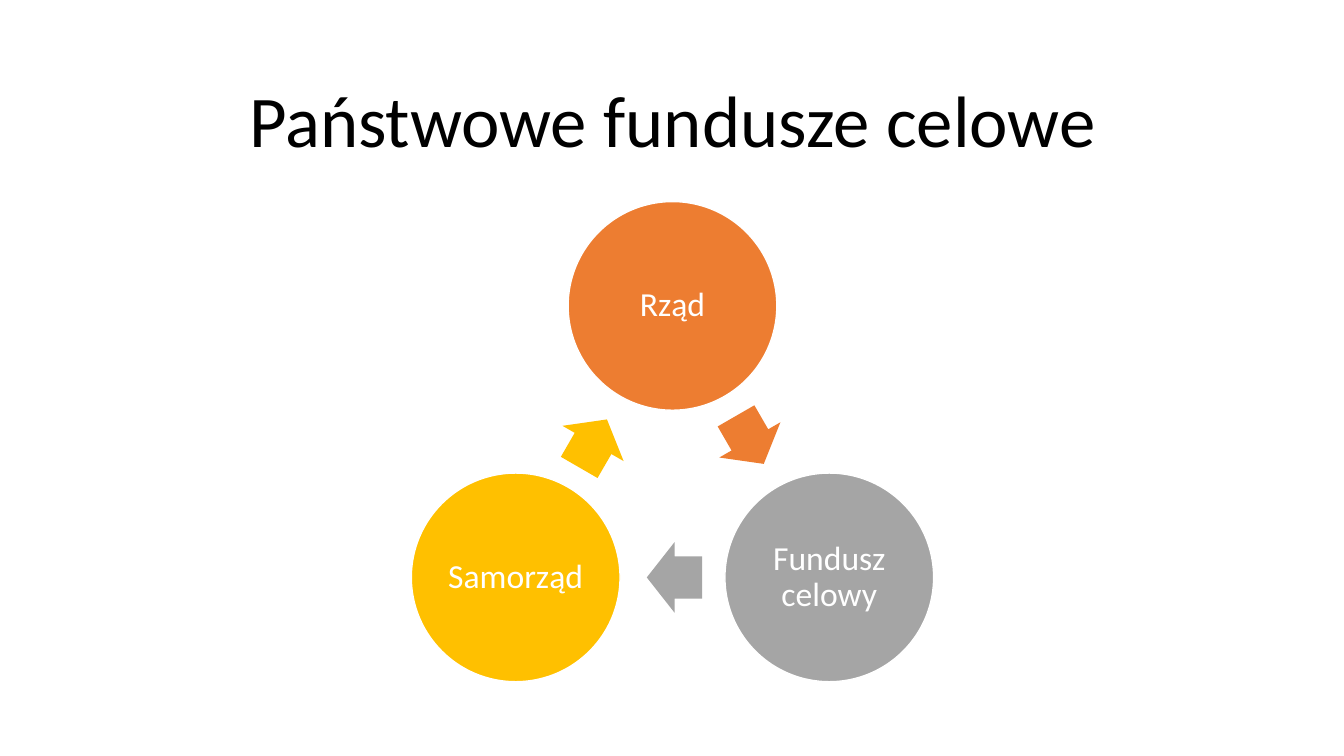
import math
import pptx
import pptx.dml.color
import pptx.enum.shapes
import pptx.enum.text
import pptx.util
from pptx.util import Inches

FONT = "Calibri"
STAGES = [("Rząd", "ED7D31"), ("Fundusz celowy", "A5A5A5"), ("Samorząd", "FFC000")]
DIAMETER = 2.07
ARROW_W, ARROW_H = 0.55, 0.7
ARROW_SETBACK = 0.02


def rgb(value):
    return pptx.dml.color.RGBColor.from_string(value)


def set_text(sp, text, size, color, inset):
    tf = sp.text_frame
    tf.word_wrap = True
    tf.vertical_anchor = pptx.enum.text.MSO_ANCHOR.MIDDLE
    tf.margin_left = tf.margin_right = tf.margin_top = tf.margin_bottom = Inches(inset)
    tf.text = text
    p = tf.paragraphs[0]
    p.alignment = pptx.enum.text.PP_ALIGN.CENTER
    p.line_spacing = 0.9
    r = p.runs[0]
    r.font.name = FONT
    r.font.size = pptx.util.Pt(size)
    r.font.color.rgb = rgb(color)


def add_centered(slide, kind, cx, cy, w, h, fill):
    sp = slide.shapes.add_shape(
        kind, Inches(cx - w / 2), Inches(cy - h / 2), Inches(w), Inches(h))
    sp.shadow.inherit = False
    sp.fill.solid()
    sp.fill.fore_color.rgb = rgb(fill)
    return sp


def add_title(slide, x, y, w, h):
    sp = slide.shapes.add_textbox(Inches(x), Inches(y), Inches(w), Inches(h))
    set_text(sp, "Państwowe fundusze celowe", 52, "000000", 0.1)


def add_cycle(slide, x, y, w):
    radius = (w - DIAMETER) / math.sqrt(3)
    cx, cy = x + w / 2, y + DIAMETER / 2 + radius
    step = 360 / len(STAGES)
    centers = []
    for i in range(len(STAGES)):
        angle = math.radians(i * step - 90)
        centers.append((cx + radius * math.cos(angle), cy + radius * math.sin(angle)))

    for i, (label, color) in enumerate(STAGES):
        x1, y1 = centers[i]
        x2, y2 = centers[(i + 1) % len(centers)]
        circle = add_centered(slide, pptx.enum.shapes.MSO_SHAPE.OVAL,
                              x1, y1, DIAMETER, DIAMETER, color)
        circle.line.color.rgb = rgb("FFFFFF")
        circle.line.width = pptx.util.Pt(1)
        set_text(circle, label, 24, "FFFFFF", 0.03)

        heading = math.atan2(y2 - y1, x2 - x1)
        arrow = add_centered(slide, pptx.enum.shapes.MSO_SHAPE.RIGHT_ARROW,
                             (x1 + x2) / 2 - ARROW_SETBACK * math.cos(heading),
                             (y1 + y2) / 2 - ARROW_SETBACK * math.sin(heading),
                             ARROW_W, ARROW_H, color)
        arrow.adjustments[0] = 0.6
        arrow.adjustments[1] = 0.5
        arrow.rotation = round(math.degrees(heading)) % 360
        arrow.line.fill.background()


def main():
    prs = pptx.Presentation()
    prs.slide_width = Inches(13.33)
    prs.slide_height = Inches(7.5)
    slide = prs.slides.add_slide(prs.slide_layouts[6])
    add_title(slide, 0.92, 0.61, 11.5, 1.24)
    add_cycle(slide, 4.08, 2, 5.18)
    prs.save("out.pptx")


if __name__ == "__main__":
    main()
